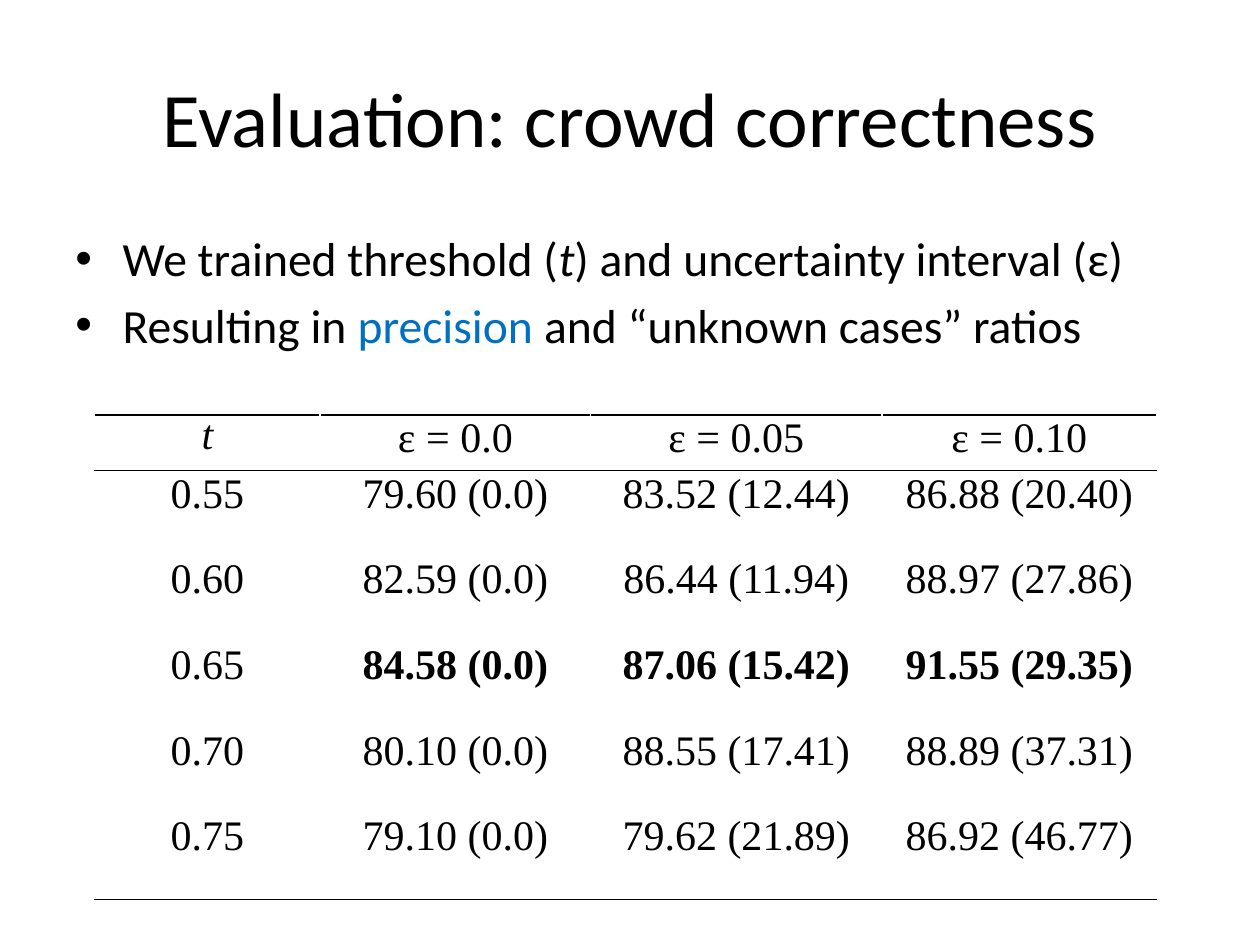
from dataclasses import dataclass

from lxml import etree
from pptx import Presentation
from pptx.dml.color import RGBColor
from pptx.enum.text import MSO_ANCHOR, PP_ALIGN
from pptx.oxml.ns import qn
from pptx.util import Pt

LEFT, CENTER = PP_ALIGN.LEFT, PP_ALIGN.CENTER
TOP, MIDDLE = MSO_ANCHOR.TOP, MSO_ANCHOR.MIDDLE
TITLE_ONLY = 5
INK = {"black": "000000", "blue": "0070C0"}
SANS, SERIF = "Calibri", "Times New Roman"


@dataclass
class Run:
    text: str
    ink: str = "black"
    bold: bool = False
    slant: bool = False


@dataclass
class Row:
    cells: list
    height: float = 49
    bold: bool = False
    lines: tuple = ()


BULLETS = [
    [Run("We trained threshold ("), Run("t", slant=True),
     Run(") and uncertainty interval (ε)")],
    [Run("Resulting in "), Run("precision ", ink="blue"),
     Run("and “unknown cases” ratios")],
]
WIDTHS = [129, 154.5, 166.5, 157]
ROWS = [
    Row(["t", "ε = 0.0", "ε = 0.05", "ε = 0.10"], 32, lines=("T", "B")),
    Row(["0.55", "79.60 (0.0)", "83.52 (12.44)", "86.88 (20.40)"], lines=("T",)),
    Row(["0.60", "82.59 (0.0)", "86.44 (11.94)", "88.97 (27.86)"]),
    Row(["0.65", "84.58 (0.0)", "87.06 (15.42)", "91.55 (29.35)"], bold=True),
    Row(["0.70", "80.10 (0.0)", "88.55 (17.41)", "88.89 (37.31)"]),
    Row(["0.75", "79.10 (0.0)", "79.62 (21.89)", "86.92 (46.77)"], lines=("B",)),
]


def write(par, runs: list, size: float, font: str, align=LEFT) -> None:
    par.alignment = align
    for item in runs:
        run = par.add_run()
        run.text = item.text
        face = run.font
        face.name, face.size = font, Pt(size)
        face.bold, face.italic = item.bold, item.slant
        face.color.rgb = RGBColor.from_string(INK[item.ink])


def bullet(par, indent: float) -> None:
    props = par._p.get_or_add_pPr()
    props.set("marL", str(Pt(indent)))
    props.set("indent", str(-Pt(indent)))
    etree.SubElement(props, qn("a:buFont"), typeface="Arial")
    etree.SubElement(props, qn("a:buChar"), char="•")


def rule(cell, side: str) -> None:
    """Draw a line along the top (T) or bottom (B) of a cell."""
    props = cell._tc.get_or_add_tcPr()
    line = etree.SubElement(props, qn("a:ln" + side), w=str(Pt(1)))
    fill = etree.SubElement(line, qn("a:solidFill"))
    etree.SubElement(fill, qn("a:srgbClr"), val=INK["black"])


def add_title(slide, text: str) -> None:
    title = slide.shapes.title
    title.left, title.top, title.width, title.height = Pt(36), Pt(21.6), Pt(648), Pt(90)
    title.text_frame.vertical_anchor = MIDDLE
    write(title.text_frame.paragraphs[0], [Run(text)], 44, SANS, CENTER)


def add_list(slide, items: list) -> None:
    box = slide.shapes.add_textbox(Pt(36), Pt(126), Pt(648), Pt(93))
    frame = box.text_frame
    frame.word_wrap = True
    frame.margin_top = Pt(5)
    for i, runs in enumerate(items):
        par = frame.add_paragraph() if i else frame.paragraphs[0]
        if i:
            par.space_before = Pt(5.2)
        bullet(par, 27)
        write(par, runs, 27.2, SANS)


def add_grid(slide, rows: list, widths: list) -> None:
    high = sum(row.height for row in rows)
    table = slide.shapes.add_table(len(rows), len(widths), Pt(54), Pt(237),
                                   Pt(sum(widths)), Pt(high)).table
    table.first_row = table.horz_banding = False
    for col, width in zip(table.columns, widths):
        col.width = Pt(width)
    for r, row in enumerate(rows):
        table.rows[r].height = Pt(row.height)
        for c, text in enumerate(row.cells):
            cell = table.cell(r, c)
            for side in row.lines:
                rule(cell, side)
            cell.fill.background()
            cell.margin_left = cell.margin_right = Pt(5)
            cell.margin_top = cell.margin_bottom = Pt(0)
            cell.vertical_anchor = TOP
            par = cell.text_frame.paragraphs[0]
            if text == "t":
                par.line_spacing = Pt(25)
            run = Run(text, bold=row.bold and c > 0, slant=text == "t")
            write(par, [run], 24, SERIF, CENTER)


def main() -> None:
    deck = Presentation()
    deck.slide_width, deck.slide_height = Pt(720), Pt(540)
    slide = deck.slides.add_slide(deck.slide_layouts[TITLE_ONLY])
    add_title(slide, "Evaluation: crowd correctness")
    add_list(slide, BULLETS)
    add_grid(slide, ROWS, WIDTHS)
    deck.save("out.pptx")


if __name__ == "__main__":
    main()
